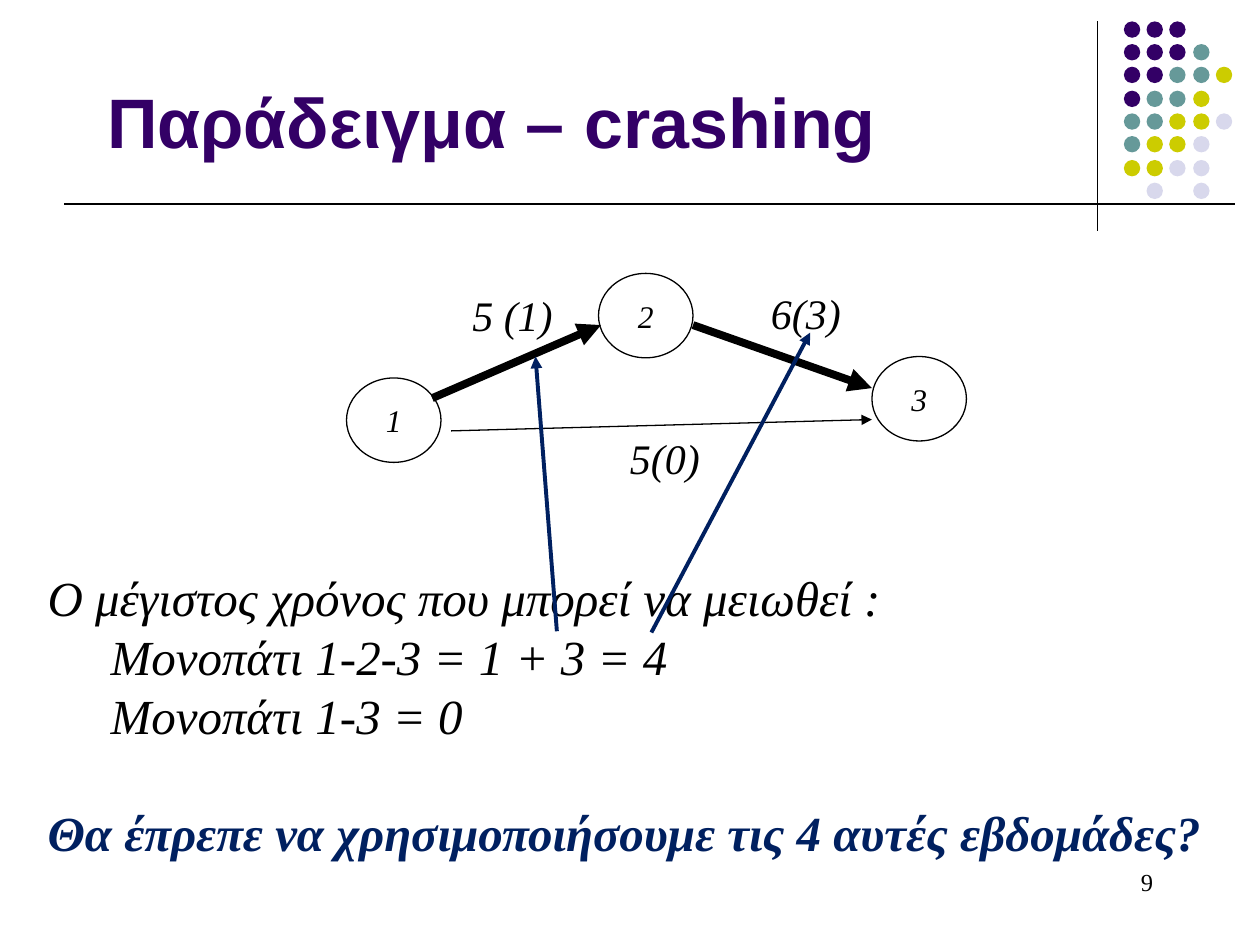
from dataclasses import dataclass

from lxml.etree import SubElement
from pptx import Presentation
from pptx.dml.color import RGBColor
from pptx.enum.shapes import MSO_CONNECTOR, MSO_SHAPE
from pptx.enum.text import MSO_ANCHOR, MSO_AUTO_SIZE, PP_ALIGN
from pptx.oxml.ns import qn
from pptx.util import Emu, Pt

EMU_PER_PX = 9144  # 100 px to the inch
BLACK, WHITE, NAVY, PURPLE = "000000", "FFFFFF", "002060", "330066"
DOT_COLOURS = {"P": PURPLE, "T": "669999", "Y": "CCCC00", "L": "D8D8EC"}
DOT_ROWS = ("PPP", "PPPT", "PPTTY", "PTTY", "TTYYL", "TYYL", "YYLL", " L L")
BODY_LINE = 33.5  # points


@dataclass(frozen=True)
class Node:
    name: str
    left: int
    top: int


@dataclass(frozen=True)
class Line:
    start: tuple[int, int]
    end: tuple[int, int]
    width: float
    colour: str = BLACK
    arrow: bool = True


@dataclass(frozen=True)
class Label:
    text: str
    left: int
    top: int
    width: int


NODES = (Node("1", 275, 300), Node("3", 692, 283), Node("2", 475, 217))
RULES = (
    Line((871, 17), (871, 183), 0.75, arrow=False),
    Line((51, 162), (980, 162), 1.5, arrow=False),
)
ACTIVITIES = (
    Line((343, 316), (477, 258), 4.5),
    Line((550, 258), (692, 308), 4.5),
    Line((358, 342), (692, 333), 0.75),
)
CALLOUTS = (
    Line((442, 501), (425, 283), 2.25, NAVY),
    Line((517, 502), (643, 264), 2.25, NAVY),
)
LABELS = (
    Label("5 (1)", 365, 225, 84),
    Label("6(3)", 602, 223, 76),
    Label("5(0)", 490, 338, 76),
)
BODY = (
    "Ο μέγιστος χρόνος που μπορεί να μειωθεί :",
    "\tΜονοπάτι 1-2-3 = 1 + 3 = 4",
    "\tΜονοπάτι 1-3 = 0",
)
QUESTION = "Θα έπρεπε να χρησιμοποιήσουμε τις 4 αυτές εβδομάδες?"


def px(length: int) -> Emu:
    return Emu(length * EMU_PER_PX)


def rgb(colour: str) -> RGBColor:
    return RGBColor.from_string(colour)


def write(para, text: str, *, size: int, font: str = "Times New Roman",
          colour: str = BLACK, bold: bool = False, italic: bool = False,
          align=PP_ALIGN.LEFT) -> None:
    para.alignment = align
    span = para.add_run()
    span.text = text
    span.font.name = font
    span.font.size = Pt(size)
    span.font.bold = bold
    span.font.italic = italic
    span.font.color.rgb = rgb(colour)


def add_box(page, left: int, top: int, width: int, height: int, wrap: bool = True):
    box = page.shapes.add_textbox(px(left), px(top), px(width), px(height))
    box.text_frame.word_wrap = wrap
    return box.text_frame


def add_ellipse(page, left: int, top: int, width: int, height: int, fill: str):
    ellipse = page.shapes.add_shape(
        MSO_SHAPE.OVAL, px(left), px(top), px(width), px(height))
    ellipse.shadow.inherit = False
    ellipse.fill.solid()
    ellipse.fill.fore_color.rgb = rgb(fill)
    ellipse.line.fill.background()
    return ellipse


def add_line(page, line: Line) -> None:
    connector = page.shapes.add_connector(
        MSO_CONNECTOR.STRAIGHT, *map(px, line.start + line.end))
    connector.line.color.rgb = rgb(line.colour)
    connector.line.width = Pt(line.width)
    if line.arrow:
        SubElement(connector.line._get_or_add_ln(), qn("a:tailEnd"), type="triangle")
    SubElement(connector._element.spPr, qn("a:effectLst"))


def add_dots(page) -> None:
    for row, codes in enumerate(DOT_ROWS):
        for column, code in enumerate(codes):
            if code in DOT_COLOURS:
                add_ellipse(page, 892 + column * 55 // 3, 17 + row * 55 // 3,
                            13, 13, DOT_COLOURS[code])


def add_node(page, node: Node) -> None:
    ellipse = add_ellipse(page, node.left, node.top, 75, 67, WHITE)
    ellipse.line.color.rgb = rgb(BLACK)
    ellipse.line.width = Pt(0.75)
    frame = ellipse.text_frame
    frame.word_wrap = False
    frame.vertical_anchor = MSO_ANCHOR.MIDDLE
    write(frame.paragraphs[0], node.name, size=18, italic=True, align=PP_ALIGN.CENTER)


def add_title(page, text: str) -> None:
    title = page.shapes.title
    title.left, title.top, title.width, title.height = map(px, (75, 67, 850, 67))
    frame = title.text_frame
    frame.auto_size = MSO_AUTO_SIZE.NONE
    frame.vertical_anchor = MSO_ANCHOR.BOTTOM
    write(frame.paragraphs[0], text, size=40, font="Arial", colour=PURPLE, bold=True)


def add_body(page) -> None:
    frame = add_box(page, 28, 446, 946, 246)
    for index, text in enumerate(BODY):
        para = frame.add_paragraph() if index else frame.paragraphs[0]
        para.line_spacing = Pt(BODY_LINE)
        write(para, text, size=28, italic=True)
    question = frame.add_paragraph()
    question.line_spacing = question.space_before = Pt(BODY_LINE)
    write(question, QUESTION, size=28, colour=NAVY, bold=True, italic=True)


def main() -> None:
    deck = Presentation()
    deck.slide_width, deck.slide_height = px(1000), px(750)
    page = deck.slides.add_slide(deck.slide_layouts[5])

    # Corner decoration and rules
    add_dots(page)
    for line in RULES:
        add_line(page, line)

    # Page number and title
    number = add_box(page, 717, 683, 208, 50)
    write(number.paragraphs[0], "9", size=14, align=PP_ALIGN.RIGHT)
    add_title(page, "Παράδειγμα – crashing")

    # Activity network
    for node in NODES:
        add_node(page, node)
    for line in ACTIVITIES:
        add_line(page, line)
    for label in LABELS:
        frame = add_box(page, label.left, label.top, label.width, 50, wrap=False)
        write(frame.paragraphs[0], label.text, size=24, italic=True)

    # Explanation and its pointers
    add_body(page)
    for line in CALLOUTS:
        add_line(page, line)

    deck.save("out.pptx")


if __name__ == "__main__":
    main()
